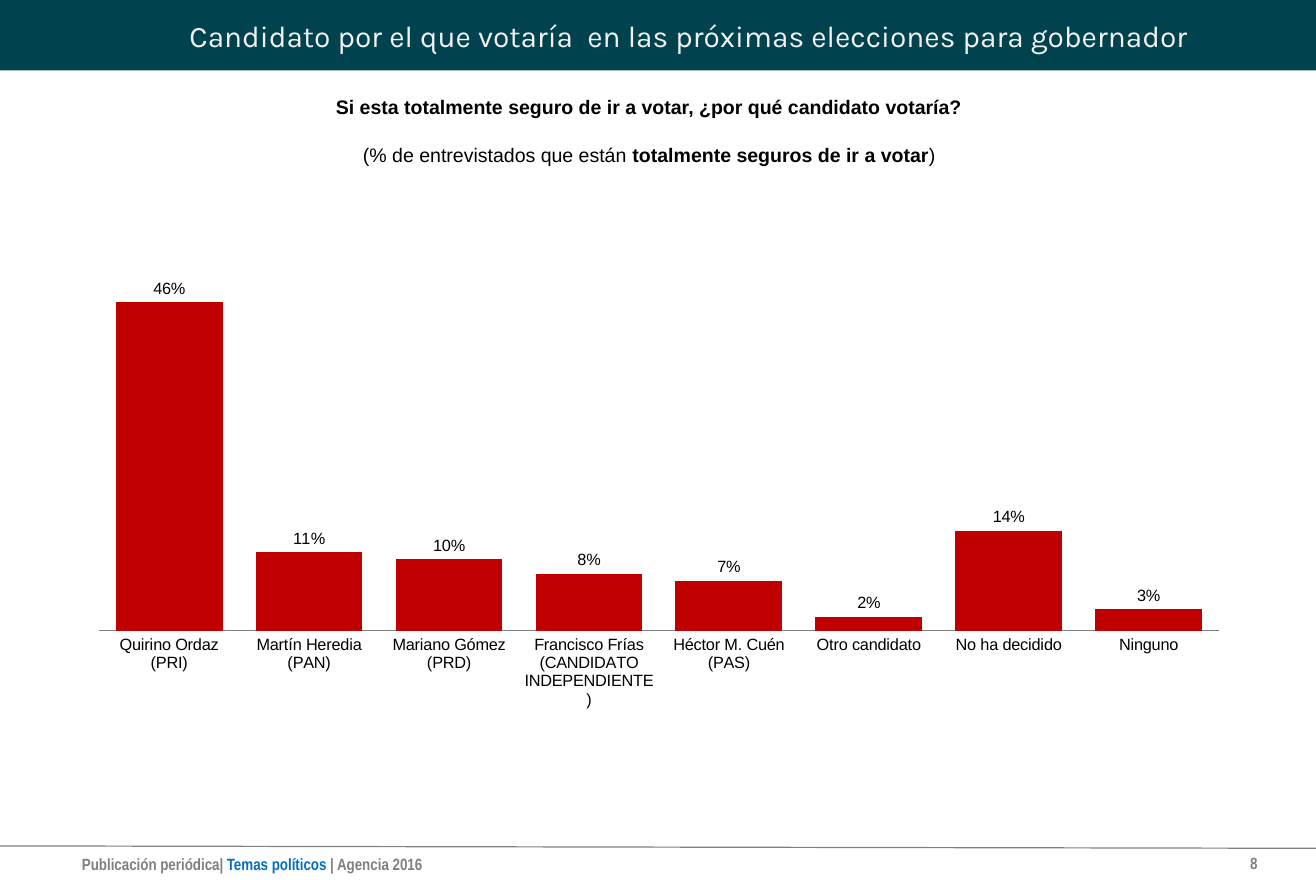
from lxml import etree
from pptx import Presentation
from pptx import util as u
from pptx.chart.data import CategoryChartData
from pptx.dml.color import RGBColor
from pptx.enum import chart as ch, shapes, text
from pptx.oxml import parse_xml
from pptx.oxml.ns import nsdecls, qn

TEAL = RGBColor(0x01, 0x42, 0x4F)
RED = RGBColor(0xC0, 0x00, 0x00)
BLUE = RGBColor(0x00, 0x70, 0xC0)
GRAY = RGBColor(0x80, 0x80, 0x80)
PALE = RGBColor(0xF2, 0xF2, 0xF2)
BLACK = RGBColor(0x00, 0x00, 0x00)

VOTES = {
    "Quirino Ordaz (PRI)": 0.46,
    "Martín Heredia (PAN)": 0.11,
    "Mariano Gómez (PRD)": 0.10,
    "Francisco Frías (CANDIDATO INDEPENDIENTE)": 0.08,
    "Héctor M. Cuén (PAS)": 0.07,
    "Otro candidato": 0.02,
    "No ha decidido": 0.14,
    "Ninguno": 0.03,
}


class PollSlide:
    body_font, title_font, footer_font = "Arial", "Karla", "Arial Narrow"
    body_size, title_size, small_size = 12, 18.3, 10

    def __init__(self, prs):
        self.width, self.height = prs.slide_width, prs.slide_height
        self.slide = prs.slides.add_slide(prs.slide_layouts[5])
        self.shapes = self.slide.shapes

    def share(self, *percents):
        sides = (self.width, self.height) * 2
        return [int(side * pc / 100) for side, pc in zip(sides, percents)]

    def style(self, font, name, size, color, bold=None):
        font.name, font.size, font.bold = name, u.Pt(size), bold
        font.color.rgb = color

    def band(self, box, color):
        sp = self.shapes.add_shape(shapes.MSO_SHAPE.RECTANGLE, *self.share(*box))
        sp.shadow.inherit = False
        sp.fill.solid()
        sp.fill.fore_color.rgb = color
        sp.line.fill.background()

    def title(self, box, words):
        sp = self.shapes.title
        sp.left, sp.top, sp.width, sp.height = self.share(*box)
        self.shapes.element.append(sp.element)
        tf = sp.text_frame
        tf.text = words
        tf.word_wrap = True
        tf.auto_size = text.MSO_AUTO_SIZE.NONE
        tf.vertical_anchor = text.MSO_ANCHOR.MIDDLE
        p = tf.paragraphs[0]
        p.alignment = text.PP_ALIGN.CENTER
        self.style(p.font, self.title_font, self.title_size, PALE)

    def rule(self, ends, color):
        line = self.shapes.add_connector(
            shapes.MSO_CONNECTOR.STRAIGHT, *self.share(*ends))
        line.line.color.rgb = color
        line.line.width = u.Pt(0.75)
        etree.SubElement(line.element.spPr, qn("a:effectLst"))

    def text(self, box, lines, font, size, color, align, bold=None, gap=0,
             anchor=text.MSO_ANCHOR.TOP):
        tf = self.shapes.add_textbox(*self.share(*box)).text_frame
        tf.word_wrap = True
        tf.vertical_anchor = anchor
        for i, runs in enumerate(lines):
            p = tf.add_paragraph() if i else tf.paragraphs[0]
            p.alignment = align
            p.space_before = u.Pt(gap if i else 0)
            self.style(p.font, font, size, color, bold)
            for words, run_bold, run_color in runs:
                r = p.add_run()
                r.text = words
                if run_bold is not None:
                    r.font.bold = run_bold
                if run_color is not None:
                    r.font.color.rgb = run_color

    def columns(self, box, votes, plot):
        data = CategoryChartData(number_format="0%")
        data.categories = list(votes)
        data.add_series("Series 1", list(votes.values()))
        chart = self.shapes.add_chart(
            ch.XL_CHART_TYPE.COLUMN_CLUSTERED, *self.share(*box), data).chart
        chart.has_title = chart.has_legend = False
        self.style(chart.font, self.body_font, self.small_size, BLACK)

        values = chart.value_axis
        values.minimum_scale, values.maximum_scale = 0, 0.5
        values.has_major_gridlines = False
        values.visible = False
        names = chart.category_axis
        names.major_tick_mark = ch.XL_TICK_MARK.NONE
        names.format.line.color.rgb = GRAY
        names.format.line.width = u.Pt(0.75)

        bars = chart.plots[0]
        bars.gap_width = 31
        bars.vary_by_categories = False
        fill = bars.series[0].format.fill
        fill.solid()
        fill.fore_color.rgb = RED
        bars.has_data_labels = True
        labels = bars.data_labels
        labels.show_value = True
        labels.number_format, labels.number_format_is_linked = "0%", False
        labels.position = ch.XL_LABEL_POSITION.OUTSIDE_END

        area = chart.element.find(".//" + qn("c:plotArea"))
        for layout in area.findall(qn("c:layout")):
            area.remove(layout)
        marks = '<c:layoutTarget val="inner"/><c:xMode val="edge"/><c:yMode val="edge"/>'
        marks += "".join(f'<c:{k} val="{v}"/>' for k, v in zip("xywh", plot))
        area.insert(0, parse_xml(
            f'<c:layout {nsdecls("c")}><c:manualLayout>{marks}</c:manualLayout></c:layout>'))


def main():
    prs = Presentation()
    prs.slide_width, prs.slide_height = u.Inches(11.22), u.Inches(7.5)
    s = PollSlide(prs)
    align = text.PP_ALIGN
    footer = (s.footer_font, s.small_size, GRAY)

    s.band((0, 0, 100, 8), TEAL)
    s.text((5.35, 96.4, 39.04, 3.6),
           [[("Publicación periódica| ", None, None),
             ("Temas políticos ", None, BLUE),
             ("| Agencia 2016", None, None)]],
           *footer, align.LEFT, bold=True)
    s.rule((0, 96.13, 100, 96.4), GRAY)
    s.columns((5.79, 29.07, 87.7, 51.47), VOTES, (0.02, 0.04, 0.97, 0.79))
    s.title((6.68, 0, 91.35, 8),
            "Candidato por el que votaría  en las próximas elecciones para gobernador")
    s.text((91.44, 96.13, 4.99, 3.87), [[("8", None, None)]],
           *footer, align.RIGHT, bold=True, anchor=text.MSO_ANCHOR.MIDDLE)
    s.text((6.51, 10.13, 85.65, 9.47),
           [[("Si esta totalmente seguro de ir a votar, ¿por qué candidato votaría?", True, None)],
            [("(% de entrevistados que están ", None, None),
             ("totalmente seguros de ir a votar", True, None),
             (")", None, None)]],
           s.body_font, s.body_size, BLACK, align.CENTER, gap=15)
    prs.save("out.pptx")


if __name__ == "__main__":
    main()
